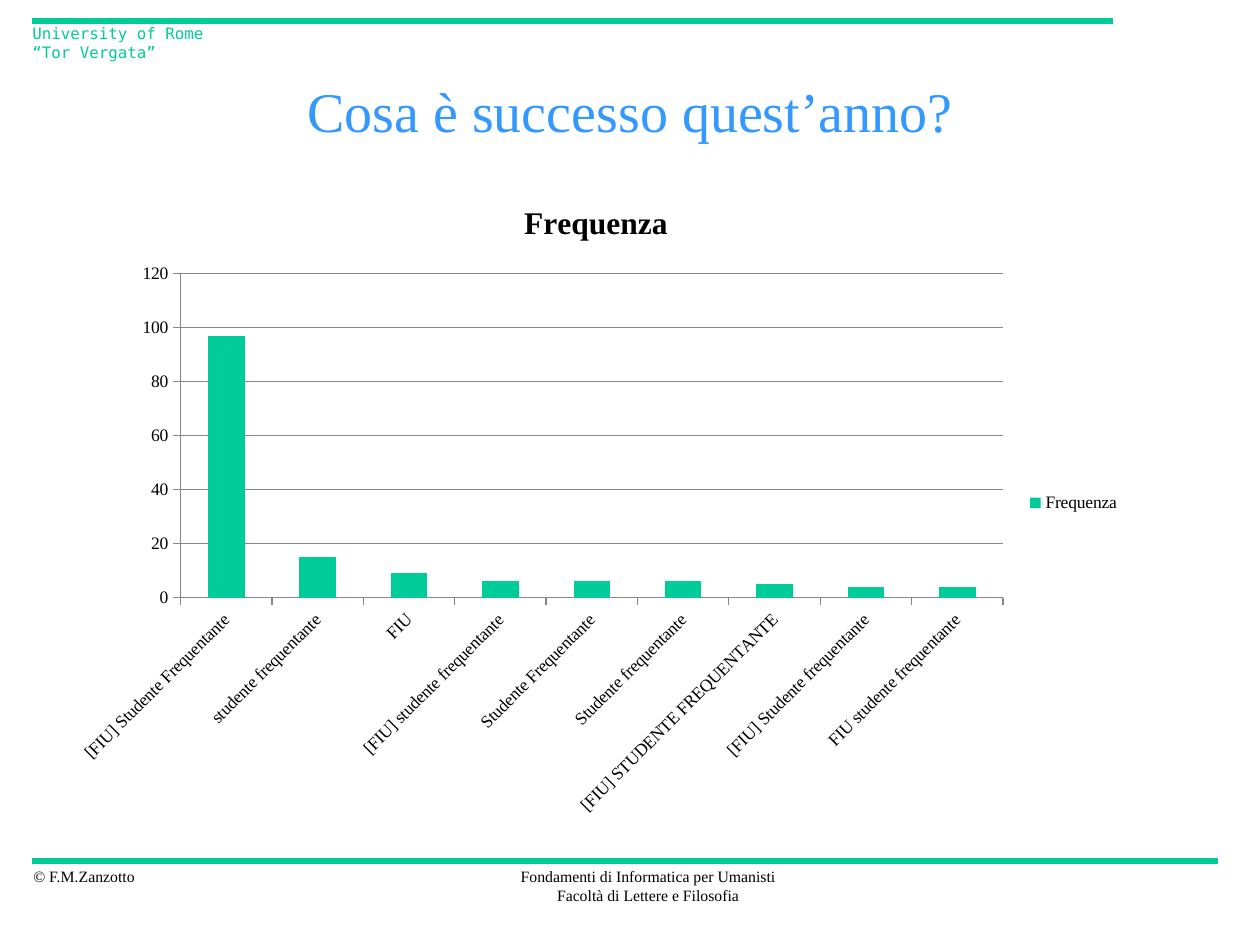
"""Build the attendance frequency slide with its column chart."""
from pptx import Presentation
from pptx.chart.data import CategoryChartData
from pptx.dml.color import RGBColor
from pptx.enum.chart import XL_CHART_TYPE as CT, XL_LEGEND_POSITION as LP, XL_TICK_MARK as TM
from pptx.enum.shapes import MSO_CONNECTOR as MC
from pptx.enum.text import MSO_ANCHOR as MA, PP_ALIGN as PA
from pptx.oxml.ns import qn
from pptx.util import Pt
from lxml import etree

PX = 914400 // 126
COLORS = {"green": "00CC99", "blue": "3399FF", "black": "000000", "grey": "868686"}
SERIF, MONO = "Times New Roman", "DejaVu Sans Mono"


def rgb(name):
    return RGBColor.from_string(COLORS[name])


def style(font, color, **values):
    for key, value in values.items():
        setattr(font, key, value)
    font.color.rgb = rgb(color)


prs = Presentation()
prs.slide_width, prs.slide_height = 1260 * PX, 945 * PX
s = prs.slides.add_slide(prs.slide_layouts[6])

for y, right in ((861, 1218), (21, 1113)):
    line = s.shapes.add_connector(MC.STRAIGHT, 32 * PX, y * PX, right * PX, y * PX)
    line.line.color.rgb = rgb("green")
    line.line.width = Pt(3)
    etree.SubElement(line._element.spPr, qn("a:effectLst"))

texts = [
    ((21, 861, 129, 32), ["© F.M.Zanzotto"], PA.LEFT, MA.TOP, False, SERIF, 9, "black"),
    ((507, 861, 282, 50), ["Fondamenti di Informatica per Umanisti", "Facoltà di Lettere e Filosofia"],
     PA.CENTER, MA.TOP, False, SERIF, 9, "black"),
    ((20, 18, 215, 32), ["University of Rome “Tor Vergata”"], PA.LEFT, MA.TOP, True, MONO, 9, "green"),
    ((95, 63, 1071, 95), ["Cosa è successo quest’anno?"], PA.CENTER, MA.MIDDLE, True, SERIF, 32, "blue"),
]
for box, lines, align, anchor, wrap, name, size, color in texts:
    tf = s.shapes.add_textbox(*(v * PX for v in box)).text_frame
    for key, value in {"word_wrap": wrap, "vertical_anchor": anchor}.items():
        setattr(tf, key, value)
    for i, text in enumerate(lines):
        p = tf.add_paragraph() if i else tf.paragraphs[0]
        p.alignment = align
        r = p.add_run()
        r.text = text
        style(r.font, color, name=name, size=Pt(size))

frequencies = {
    "[FIU] Studente Frequentante": 97,
    "studente frequentante": 15,
    "FIU": 9,
    "[FIU] studente frequentante": 6,
    "Studente Frequentante": 6,
    "Studente frequentante": 6,
    "[FIU] STUDENTE FREQUENTANTE": 5,
    "[FIU] Studente frequentante": 4,
    "FIU studente frequentante": 4,
}
data = CategoryChartData()
data.categories = list(frequencies)
data.add_series("Frequenza", list(frequencies.values()))
box = (59, 178, 1074, 650)
chart = s.shapes.add_chart(CT.COLUMN_CLUSTERED, *(v * PX for v in box), data).chart
style(chart.font, "black", name=SERIF, size=Pt(10))

chart.has_title = True
p = chart.chart_title.text_frame.paragraphs[0]
r = p.add_run()
r.text = "Frequenza"
style(r.font, "black", name=SERIF, size=Pt(18), bold=True)
chart.chart_title.include_in_layout = False

chart.has_legend = True
chart.legend.position = LP.RIGHT
chart.legend.include_in_layout = False

plot = chart.plots[0]
plot.vary_by_categories = False
plot.gap_width = 150
fill = plot.series[0].format.fill
fill.solid()
fill.fore_color.rgb = rgb("green")

cat, val = chart.category_axis, chart.value_axis
val.has_major_gridlines = True
for key, value in {"minimum_scale": 0, "maximum_scale": 120, "major_unit": 20}.items():
    setattr(val, key, value)
for axis in (cat, val):
    axis.major_tick_mark = TM.OUTSIDE
    style(axis.tick_labels.font, "black", name=SERIF, size=Pt(10))
for part in (cat, val, val.major_gridlines):
    part.format.line.color.rgb = rgb("grey")
    part.format.line.width = Pt(0.75)
cat._element.find(qn("c:txPr")).find(qn("a:bodyPr")).set("rot", "-2700000")

prs.save("out.pptx")
